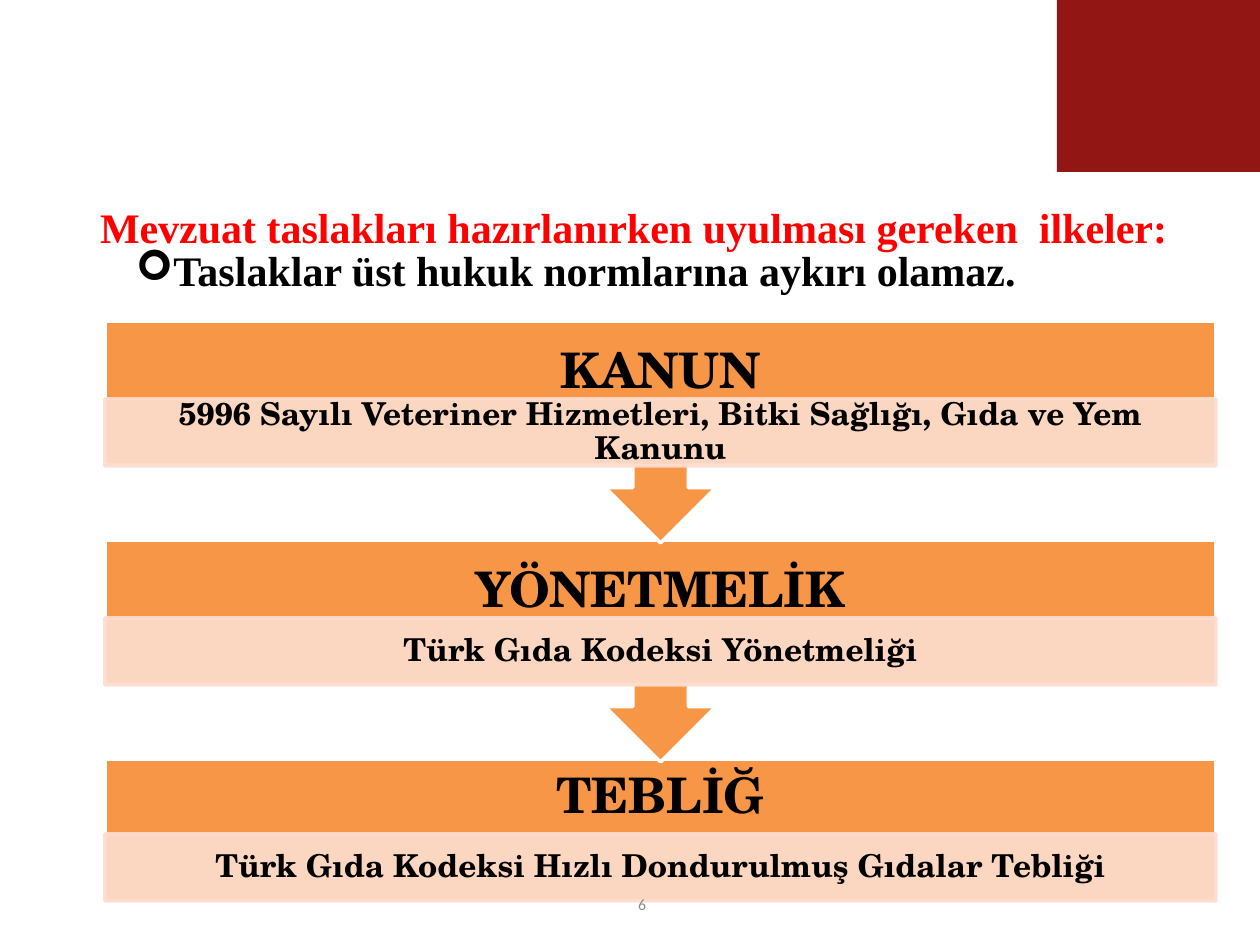
from dataclasses import dataclass

from lxml.etree import SubElement
from pptx import Presentation
from pptx.dml.color import RGBColor
from pptx.enum.shapes import MSO_SHAPE as Shape
from pptx.enum.text import MSO_ANCHOR as Anchor, MSO_AUTO_SIZE as AutoSize, PP_ALIGN as Align
from pptx.oxml.ns import qn
from pptx.util import Pt

EMU_PER_PX = 914400 / 126
LEVEL_LEFT, LEVEL_WIDTH = 105, 1111
LEVEL_TOP, LEVEL_PITCH = 321, 219
LEVELS = [
    ("KANUN", "5996 Sayılı Veteriner Hizmetleri, Bitki Sağlığı, Gıda ve Yem Kanunu"),
    ("YÖNETMELİK", "Türk Gıda Kodeksi Yönetmeliği"),
    ("TEBLİĞ", "Türk Gıda Kodeksi Hızlı Dondurulmuş Gıdalar Tebliği"),
]


@dataclass(frozen=True)
class Theme:
    serif: str = "Times New Roman"
    diagram: str = "TeX Gyre Schola"
    sans: str = "Calibri"
    ink: str = "000000"
    heading: str = "FF0000"
    level: str = "F79646"
    outline: str = "FFFFFF"
    band: str = "FCDDCF"
    corner: str = "921614"
    muted: str = "8C8C8C"
    heading_size: int = 24
    level_size: int = 28
    band_size: int = 18
    number_size: int = 9
    line_width: int = 2


THEME = Theme()


def px(length):
    return round(length * EMU_PER_PX)


def set_all(target, values):
    for name, value in values.items():
        setattr(target, name, value)


def add_text(slide, box, wording, font, size, color, bold=True, align=Align.LEFT,
             spacing=0.9, anchor=Anchor.MIDDLE, inset=(13, 6), bullet=None):
    label = slide.shapes.add_textbox(*map(px, box))
    side, edge = map(px, inset)
    set_all(label.text_frame, dict(
        word_wrap=True, vertical_anchor=anchor, margin_left=side,
        margin_right=side, margin_top=edge, margin_bottom=edge))
    paragraph = label.text_frame.paragraphs[0]
    set_all(paragraph, dict(alignment=align, line_spacing=spacing))
    if bullet:
        props = paragraph._p.get_or_add_pPr()
        props.set("marL", str(px(24)))
        props.set("indent", str(px(-24)))
        SubElement(props, qn("a:buFont")).set("typeface", "Wingdings")
        SubElement(props, qn("a:buChar")).set("char", bullet)
    run = paragraph.add_run()
    run.text = wording
    set_all(run.font, dict(name=font, size=Pt(size), bold=bold))
    run.font.color.rgb = RGBColor.from_string(color)
    return label


def add_block(slide, kind, box, color, outline=None, opacity=100, rotation=0):
    block = slide.shapes.add_shape(kind, *map(px, box))
    block.rotation = rotation
    block.shadow.inherit = False
    paints = [block.fill]
    block.fill.solid()
    block.fill.fore_color.rgb = RGBColor.from_string(color)
    if outline:
        block.line.width = Pt(THEME.line_width)
        block.line.fill.solid()
        block.line.color.rgb = RGBColor.from_string(outline)
        paints.append(block.line.fill)
    else:
        block.line.fill.background()
    if opacity < 100:
        for paint in block._element.spPr.iter(qn("a:srgbClr")):
            SubElement(paint, qn("a:alpha")).set("val", str(opacity * 1000))


def add_level(slide, index, name, regulation):
    top = LEVEL_TOP + index * LEVEL_PITCH
    if index == len(LEVELS) - 1:
        kind, height, rotation = Shape.RECTANGLE, 144, 0
        name_offset, name_height, band_offset = 0, 78, 75
    else:
        kind, height, rotation = Shape.UP_ARROW_CALLOUT, 222, 180
        name_offset, name_height, band_offset = 27, 50, 78

    def row(offset, row_height):
        return LEVEL_LEFT, top + offset, LEVEL_WIDTH, row_height

    band = row(band_offset, 67)
    add_block(slide, kind, row(0, height), THEME.level, THEME.outline, rotation=rotation)
    add_text(slide, row(name_offset, name_height), name, THEME.diagram,
             THEME.level_size, THEME.ink, align=Align.CENTER, inset=(28, 28))
    add_block(slide, Shape.RECTANGLE, band, THEME.band, THEME.band, opacity=90)
    add_text(slide, band, regulation, THEME.diagram, THEME.band_size, THEME.ink,
             align=Align.CENTER, inset=(18, 4))


def main():
    deck = Presentation()
    set_all(deck, dict(slide_width=px(1260), slide_height=px(945)))
    slide = deck.slides.add_slide(deck.slide_layouts[6])
    add_text(slide, (87, 194, 1115, 71),
             "Mevzuat taslakları hazırlanırken uyulması gereken  ilkeler:",
             THEME.serif, THEME.heading_size, THEME.heading)
    for index, (name, regulation) in reversed(list(enumerate(LEVELS))):
        add_level(slide, index, name, regulation)
    principle = add_text(slide, (123, 244, 942, 58),
                         "Taslaklar üst hukuk normlarına aykırı olamaz.",
                         THEME.serif, THEME.heading_size, THEME.ink,
                         align=Align.JUSTIFY, anchor=Anchor.TOP, bullet="➢")
    principle.text_frame.auto_size = AutoSize.SHAPE_TO_FIT_TEXT
    add_block(slide, Shape.RECTANGLE, (1057, 0, 203, 172), THEME.corner)
    add_text(slide, (600, 882, 59, 44), "6", THEME.sans, THEME.number_size,
             THEME.muted, bold=False, align=Align.RIGHT, spacing=1.0)
    deck.save("out.pptx")


if __name__ == "__main__":
    main()
